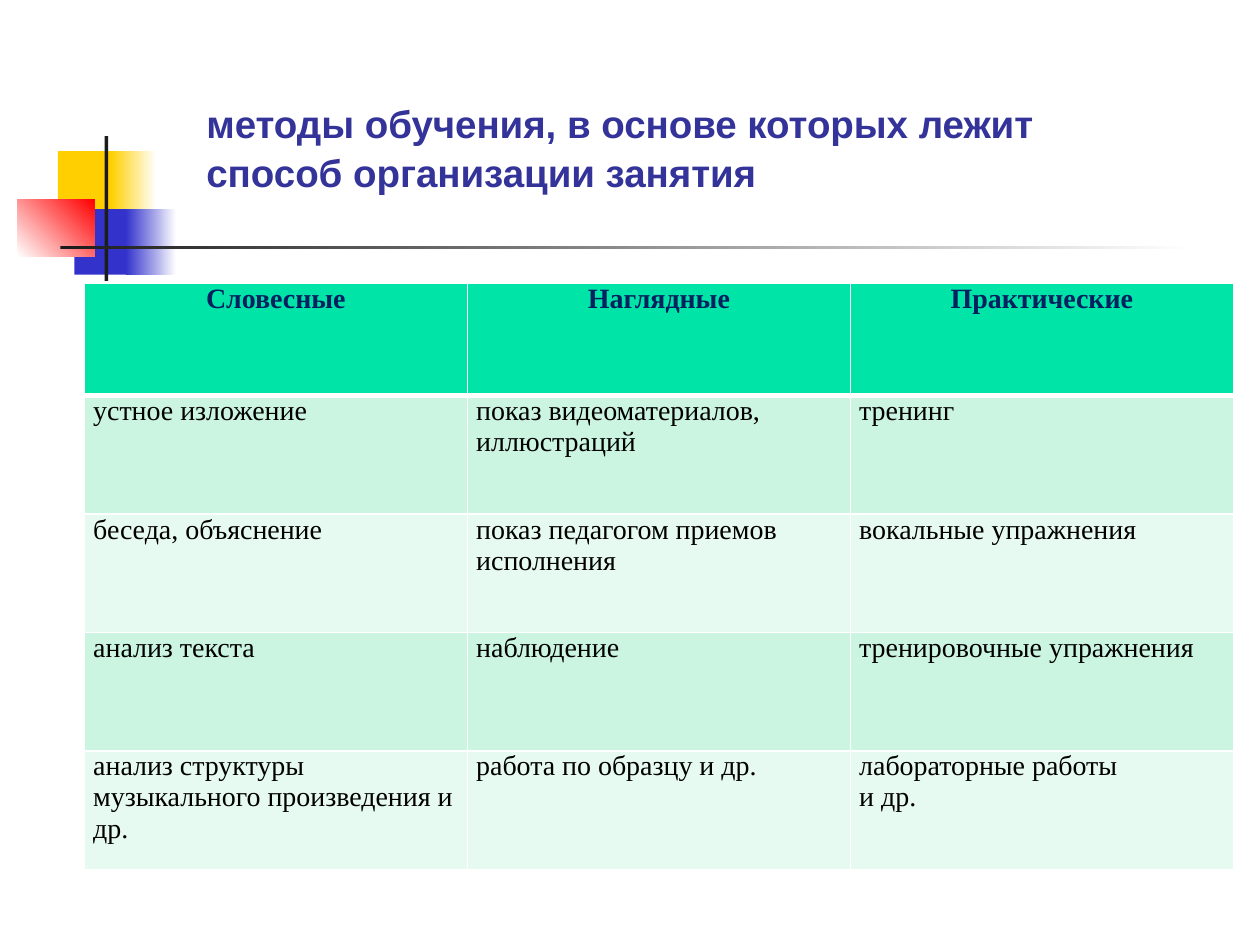
from dataclasses import dataclass

from lxml.etree import SubElement
from pptx import Presentation
from pptx.dml.color import RGBColor as RGB
from pptx.enum.shapes import MSO_SHAPE as SHAPE
from pptx.enum.text import MSO_ANCHOR as ANCHOR, PP_ALIGN as ALIGN
from pptx.oxml.ns import qn
from pptx.util import Inches, Pt


@dataclass(frozen=True)
class Theme:
    """Colours, fonts and type sizes of the slide."""
    white: str = "FFFFFF"
    yellow: str = "FFCF01"
    blue: str = "3333CC"
    red: str = "FF0000"
    dark: str = "1C1C1C"
    title: str = "333399"
    head_text: str = "002060"
    body_text: str = "000000"
    head_fill: str = "00E4A8"
    bands: tuple = ("CCF5E1", "E7FAF1")
    title_font: str = "Arial"
    table_font: str = "Times New Roman"
    title_size: int = 22
    table_size: int = 16


T = Theme()
HEADERS = ["Словесные", "Наглядные", "Практические"]
METHODS = [
    ["устное изложение", "показ видеоматериалов, иллюстраций", "тренинг"],
    ["беседа, объяснение", "показ педагогом приемов исполнения", "вокальные упражнения"],
    ["анализ текста", "наблюдение", "тренировочные упражнения"],
    ["анализ структуры музыкального произведения и др.", "работа по образцу и др.",
     "лабораторные работы\nи др."],
]


def add_run(p, text, font, size, color, bold):
    """Add one styled run to a paragraph."""
    r = p.add_run()
    r.text = text
    r.font.name, r.font.size, r.font.bold = font, Pt(size), bold
    r.font.color.rgb = RGB.from_string(color)


def add_block(s, box, start, end=None, angle=0):
    """Add a borderless rectangle, solid or fading from start to end."""
    sp = s.shapes.add_shape(SHAPE.RECTANGLE, *map(Inches, box))
    sp.shadow.inherit = False
    sp.line.fill.background()
    if end is None:
        sp.fill.solid()
        sp.fill.fore_color.rgb = RGB.from_string(start)
        return
    sp.fill.gradient()
    sp.fill.gradient_angle = angle
    for stop, color in zip(sp.fill.gradient_stops, (start, end)):
        stop.color.rgb = RGB.from_string(color)


def add_ornament(s, left, top):
    """Draw the overlapping squares and crossing bars."""
    blocks = [
        ((0.32, 0.12, 0.48, 0.52), T.yellow),
        ((0.74, 0.12, 0.36, 0.52), T.yellow, T.white),
        ((0.45, 0.58, 0.46, 0.52), T.blue),
        ((0.86, 0.58, 0.4, 0.52), T.blue, T.white),
        ((0, 0.5, 0.61, 0.46), T.white, T.red, 45),
        ((0.69, 0, 0.03, 1.15), T.dark),
        ((0.34, 0.87, 9, 0.03), T.dark, T.white),
    ]
    for (x, y, w, h), *paint in blocks:
        add_block(s, (left + x, top + y, w, h), *paint)


def add_title(s, box):
    """Place the heading at the bottom of its box."""
    tf = s.shapes.add_textbox(*map(Inches, box)).text_frame
    tf.word_wrap = True
    tf.vertical_anchor = ANCHOR.BOTTOM
    p = tf.paragraphs[0]
    p.line_spacing = 1.07
    add_run(p, "методы обучения, в основе которых лежит способ организации занятия",
            T.title_font, T.title_size, T.title, True)


def set_borders(cell, bottom):
    """Give a cell white borders, with its own bottom width in points."""
    pr = cell._tc.get_or_add_tcPr()
    for i, (side, width) in enumerate((("L", 1), ("R", 1), ("T", 1), ("B", bottom))):
        ln = pr.makeelement(qn(f"a:ln{side}"), {"w": str(Pt(width))})
        SubElement(SubElement(ln, qn("a:solidFill")), qn("a:srgbClr"), val=T.white)
        pr.insert(i, ln)


def fill_cell(cell, text, is_head, fill):
    """Write and style one table cell."""
    cell.margin_left = cell.margin_right = Inches(0.07)
    cell.margin_top = cell.margin_bottom = 0
    cell.fill.solid()
    cell.fill.fore_color.rgb = RGB.from_string(fill)
    set_borders(cell, 3 if is_head else 1)
    tf = cell.text_frame
    for i, line in enumerate(text.split("\n")):
        p = tf.add_paragraph() if i else tf.paragraphs[0]
        p.alignment = ALIGN.CENTER if is_head else ALIGN.LEFT
        add_run(p, line, T.table_font, T.table_size,
                T.head_text if is_head else T.body_text, is_head)


def add_methods_table(s, box, head_height):
    """Build the table with a header row and equal banded rows."""
    rows = [HEADERS] + METHODS
    table = s.shapes.add_table(len(rows), len(HEADERS), *map(Inches, box)).table
    for col in table.columns:
        col.width = Inches(box[2] / len(HEADERS))
    for i, texts in enumerate(rows):
        table.rows[i].height = Inches((box[3] - head_height) / len(METHODS) if i else head_height)
        fill = T.bands[(i - 1) % 2] if i else T.head_fill
        for j, text in enumerate(texts):
            fill_cell(table.cell(i, j), text, i == 0, fill)


def main():
    """Build and save the slide."""
    prs = Presentation()
    prs.slide_width, prs.slide_height = Inches(10), Inches(7.5)
    s = prs.slides.add_slide(prs.slide_layouts[6])
    add_ornament(s, 0.14, 1.08)
    add_title(s, (1.54, 0.68, 7.6, 0.92))
    add_methods_table(s, (0.67, 2.25, 9.12, 4.65), 0.89)
    prs.save("out.pptx")


if __name__ == "__main__":
    main()
